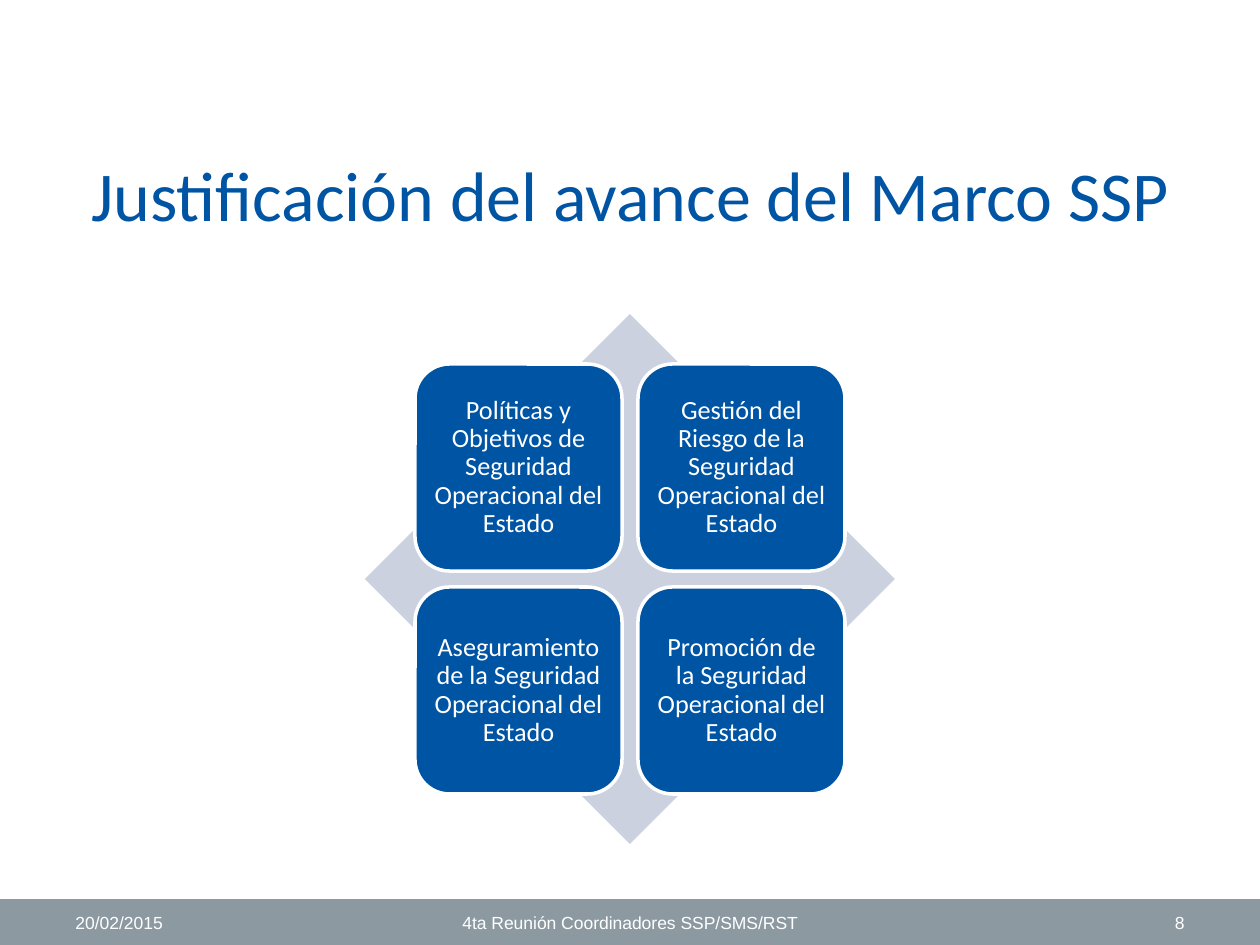
from pptx import Presentation
from pptx.dml.color import RGBColor
from pptx.enum.shapes import MSO_SHAPE
from pptx.enum.text import MSO_ANCHOR, PP_ALIGN
from pptx.util import Pt

PX = 914400 / 126
COLORS = {"blue": "0054A4", "lavender": "CCD1E0", "gray": "8C99A1", "white": "FFFFFF"}
TILES = [
    "Políticas y Objetivos de Seguridad Operacional del Estado",
    "Gestión del Riesgo de la Seguridad Operacional del Estado",
    "Aseguramiento de la Seguridad Operacional del Estado",
    "Promoción de la Seguridad Operacional del Estado",
]


def px(*lengths):
    return [round(n * PX) for n in lengths]


def rgb(name):
    return RGBColor.from_string(COLORS[name])


def add_box(s, kind, box, fill, line=None):
    sp = s.shapes.add_shape(kind, *px(*box))
    sp.shadow.inherit = False
    sp.fill.solid()
    sp.fill.fore_color.rgb = rgb(fill)
    if line:
        sp.line.color.rgb = rgb(line)
        sp.line.width = Pt(2)
    else:
        sp.line.fill.background()
    return sp


def write(sp, text, size, font, color, align, anchor=MSO_ANCHOR.MIDDLE):
    tf = sp.text_frame
    tf.word_wrap = True
    tf.vertical_anchor = anchor
    p = tf.paragraphs[0]
    p.text = text
    p.alignment = align
    r = p.runs[0]
    r.font.size = Pt(size)
    r.font.name = font
    r.font.color.rgb = rgb(color)
    return tf


def add_title(s, box, text):
    sp = s.shapes.add_textbox(*px(*box))
    write(sp, text, 40, "Calibri", "blue", PP_ALIGN.CENTER, MSO_ANCHOR.TOP)


def add_matrix(s, box, texts, tile=207, gap=16):
    x, y, w, h = box
    add_box(s, MSO_SHAPE.DIAMOND, box, "lavender")
    margin = (w - 2 * tile - gap) // 2
    inset = px(8)[0]
    for i, text in enumerate(texts):
        row, col = divmod(i, 2)
        left = x + margin + col * (tile + gap)
        top = y + margin + row * (tile + gap)
        sp = add_box(s, MSO_SHAPE.ROUNDED_RECTANGLE, (left, top, tile, tile), "blue", "white")
        tf = write(sp, text, 15, "Calibri", "white", PP_ALIGN.CENTER)
        tf.margin_left = tf.margin_right = tf.margin_top = tf.margin_bottom = inset
        tf.paragraphs[0].line_spacing = 0.9


def add_footer(s, box, date, event, number):
    x, y, w, h = box
    add_box(s, MSO_SHAPE.RECTANGLE, box, "gray")
    parts = [
        (63, 294, date, PP_ALIGN.LEFT),
        (430, 400, event, PP_ALIGN.CENTER),
        (w - 63 - 294, 294, number, PP_ALIGN.RIGHT),
    ]
    for left, width, text, align in parts:
        sp = s.shapes.add_textbox(*px(x + left, y, width, h))
        write(sp, text, 10, "Arial", "white", align)


def main():
    prs = Presentation()
    prs.slide_width, prs.slide_height = px(1260, 945)
    s = prs.slides.add_slide(prs.slide_layouts[6])
    add_footer(s, (0, 899, 1260, 46), "20/02/2015", "4ta Reunión Coordinadores SSP/SMS/RST", "8")
    add_title(s, (63, 145, 1134, 158), "Justificación del avance del Marco SSP")
    add_matrix(s, (365, 314, 530, 530), TILES)
    prs.save("out.pptx")


if __name__ == "__main__":
    main()
